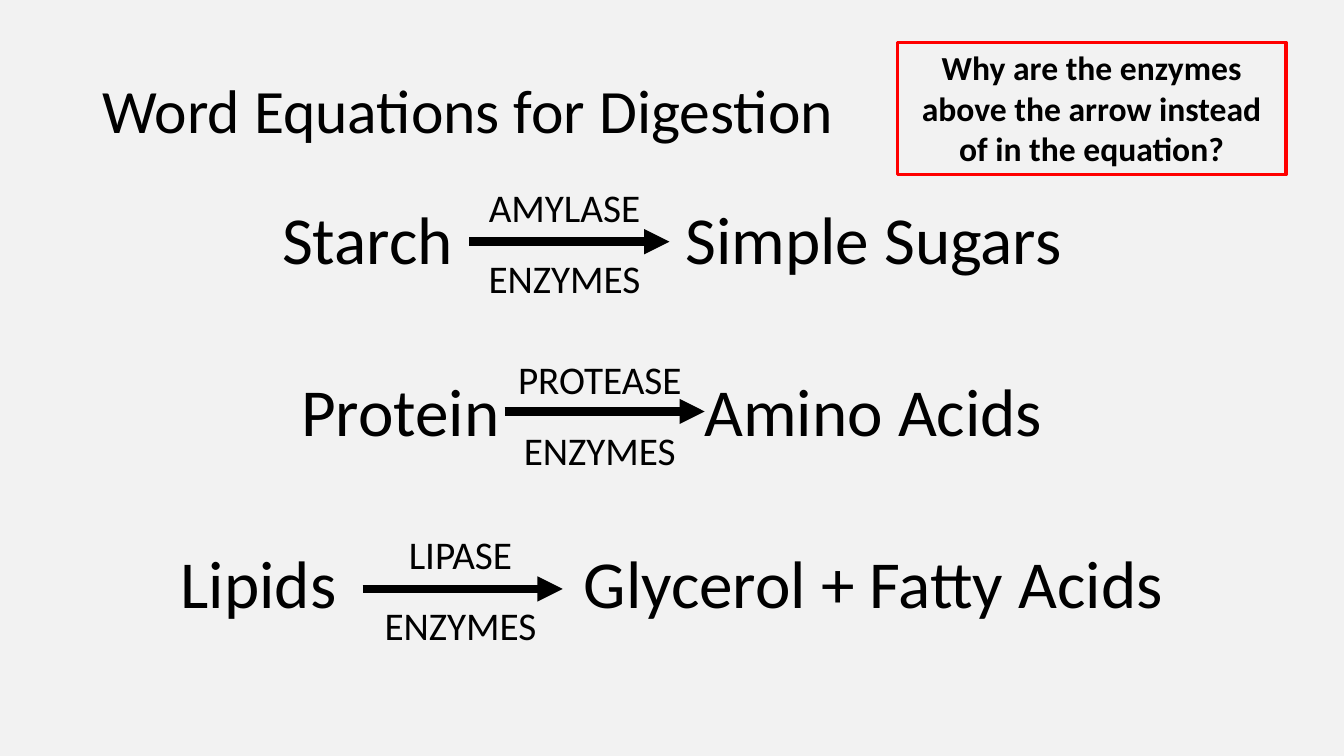
from pptx import Presentation
from pptx.dml.color import RGBColor
from pptx.enum.shapes import MSO_CONNECTOR, MSO_SHAPE
from pptx.enum.text import MSO_ANCHOR, MSO_AUTO_SIZE, PP_ALIGN
from pptx.oxml.ns import qn
from pptx.util import Cm, Pt
from lxml import etree

LEFT, CENTER = PP_ALIGN.LEFT, PP_ALIGN.CENTER
TOP, MIDDLE = MSO_ANCHOR.TOP, MSO_ANCHOR.MIDDLE

# Content
TITLE = "Word Equations for Digestion"
QUESTION = "Why are the enzymes above the arrow instead of in the equation?"
CATALYST = "ENZYMES"
EQUATIONS = [
    "Starch \t\t\tSimple Sugars",
    "Protein\t\t\tAmino Acids",
    "Lipids\t\t\tGlycerol + Fatty Acids",
]
# Enzyme, arrow start (x, y), label box (left, top, width), in cm
REACTIONS = [
    ("AMYLASE", (11.83, 6.09), (11.96, 4.5, 4.53)),
    ("PROTEASE", (12.72, 10.37), (12.55, 8.83, 5.13)),
    ("LIPASE", (9.14, 14.84), (9.04, 13.24, 5.13)),
]
ARROW_LENGTH = 5.04
LABEL_HEIGHT = 3.28

THEME = {
    "font": "Calibri",
    "background": RGBColor(0xF2, 0xF2, 0xF2),
    "ink": RGBColor(0, 0, 0),
    "accent": RGBColor(0xFF, 0, 0),
    "title": Pt(44), "equation": Pt(48), "label": Pt(28), "question": Pt(24),
}


def place(s, left, top, width, height):
    s.left, s.top, s.width, s.height = Cm(left), Cm(top), Cm(width), Cm(height)


def write(s, lines, size, align=CENTER, anchor=TOP, bold=False,
          spacing=1.0, first=0, gap=0):
    tf = s.text_frame
    tf.word_wrap = True
    tf.auto_size = MSO_AUTO_SIZE.NONE
    tf.vertical_anchor = anchor
    for i, line in enumerate(lines):
        p = tf.add_paragraph() if i else tf.paragraphs[0]
        p.alignment = align
        p.line_spacing = spacing
        p.space_before = Pt(gap if i else first)
        r = p.add_run()
        r.text = line
        r.font.name, r.font.size, r.font.bold = THEME["font"], size, bold
        r.font.color.rgb = THEME["ink"]
    return tf


def add_arrow(x, y):
    s = slide.shapes.add_connector(MSO_CONNECTOR.STRAIGHT, Cm(x), Cm(y),
                                   Cm(x + ARROW_LENGTH), Cm(y))
    s.line.color.rgb = THEME["ink"]
    s.line.width = Pt(6)
    etree.SubElement(s.line._get_or_add_ln(), qn("a:tailEnd"), type="triangle")
    etree.SubElement(s._element.spPr, qn("a:effectLst"))


prs = Presentation()
prs.slide_width, prs.slide_height = Cm(33.87), Cm(19.05)
slide = prs.slides.add_slide(prs.slide_layouts[1])
slide.background.fill.solid()
slide.background.fill.fore_color.rgb = THEME["background"]

# Title
title = slide.shapes.title
place(title, 2.33, 1.01, 29.21, 3.68)
write(title, [TITLE], THEME["title"], LEFT, MIDDLE, spacing=0.9)

# Equations: unbulleted, with one-inch tab stops
body = slide.placeholders[1]
place(body, 2.33, 5.07, 29.21, 12.09)
tf = write(body, EQUATIONS, THEME["equation"], spacing=0.9, first=10, gap=71)
for p in tf.paragraphs:
    pPr = p._p.get_or_add_pPr()
    for name, value in (("marL", 0), ("indent", 0), ("defTabSz", Cm(2.54))):
        pPr.set(name, str(value))
    etree.SubElement(pPr, qn("a:buNone"))

# Arrows with their enzymes
for enzyme, start, (left, top, width) in REACTIONS:
    add_arrow(*start)
    label = slide.shapes.add_textbox(Cm(left), Cm(top), Cm(width), Cm(LABEL_HEIGHT))
    write(label, [enzyme, CATALYST], THEME["label"], gap=17)

# Question box
box = slide.shapes.add_shape(MSO_SHAPE.RECTANGLE, Cm(22.61), Cm(1.07), Cm(9.8), Cm(3.33))
box.shadow.inherit = False
box.fill.background()
box.line.color.rgb = THEME["accent"]
box.line.width = Pt(2.25)
write(box, [QUESTION], THEME["question"], bold=True)

prs.save("out.pptx")
